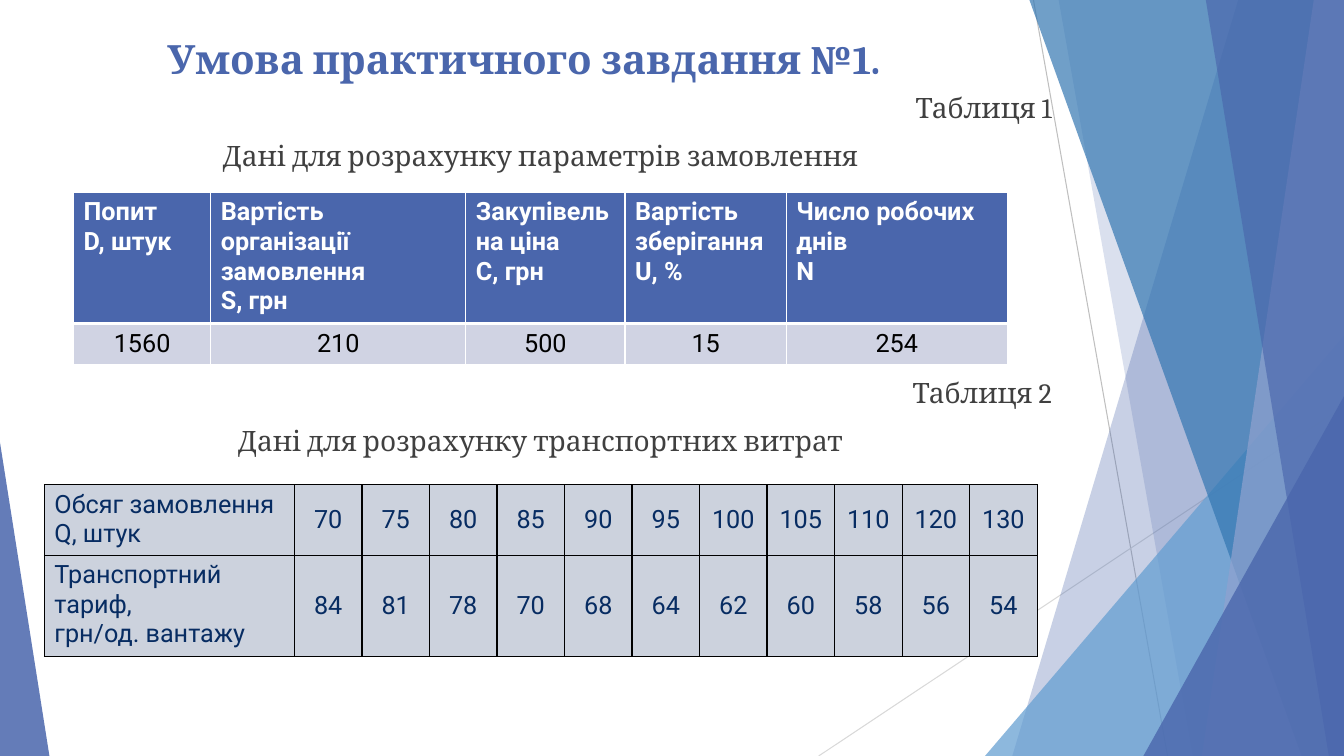
import pptx
import pptx.util
import pptx.dml.color
import pptx.enum.shapes
import pptx.enum.text
import pptx.oxml
from pptx.oxml.ns import qn
from pptx.util import Inches

# Content
TITLE = "Умова практичного завдання №1."
CAPTIONS = [  # label, heading, top of the label
    ("Таблиця 1", "Дані для розрахунку параметрів замовлення", 0.85),
    ("Таблиця 2", "Дані для розрахунку транспортних витрат", 3.68),
]
ORDER_ROWS = [
    ["Попит\nD, штук", "Вартість організації замовлення\nS, грн",
     "Закупівельна ціна\nС, грн", "Вартість зберігання\nU, %",
     "Число робочих днів\nN"],
    [1560, 210, 500, 15, 254],
]
TARIFF_ROWS = [
    ["Обсяг замовлення\nQ, штук", 70, 75, 80, 85, 90, 95, 100, 105, 110, 120, 130],
    ["Транспортний тариф,\nгрн/од. вантажу", 84, 81, 78, 70, 68, 64, 62, 60, 58, 56, 54],
]

COLORS = {
    "blue": "4A66AC", "sky": "629DD1", "ocean": "3477B2", "mist": "90A2CF",
    "gray": "BFBFBF", "light gray": "D9D9D9", "text": "404040", "navy": "072C62",
    "pale": "D0D3E3", "steel": "CCD2DD", "white": "FFFFFF", "black": "000000",
}
WIDTH, HEIGHT = 13.33, 7.5
LINES = [((10.25, 0), (11.58, HEIGHT), "gray"),
         ((WIDTH, 4.03), (8.12, HEIGHT), "light gray")]
# Bands reach the right edge: top-left x, bottom-left x, colour, opacity %
# Triangles stand on the bottom edge: left, top, width, apex, colour, opacity %
FACETS = [
    ("band", 12.28, 10.04, "blue", 30),
    ("band", 10.5, 11.83, "blue", 20),
    ("triangle", 9.77, 3.33, 3.56, 1, "sky", 72),
    ("band", 10.21, 12.91, "ocean", 70),
    ("band", 13.03, 11.92, "mist", 70),
    ("band", 11.96, 13.18, "blue", 65),
    ("triangle", 11.34, 3.93, 1.99, 1, "blue", 80),
    ("triangle", 0, 4.39, 0.49, 0, "blue", 85),
]

ALIGN = pptx.enum.text.PP_ALIGN
ANCHOR = pptx.enum.text.MSO_ANCHOR


def rgb(name):
    return pptx.dml.color.RGBColor.from_string(COLORS[name])


def format_text(frame, align, size, font, color, bold=False):
    values = {"size": pptx.util.Pt(size), "name": font, "bold": bold}
    for para in frame.paragraphs:
        para.alignment = align
        for span in para.runs:
            for key, value in values.items():
                setattr(span.font, key, value)
            span.font.color.rgb = rgb(color)


def paint(shape, color, opacity):
    shape.shadow.inherit = False
    shape.line.fill.background()
    shape.fill.solid()
    shape.fill.fore_color.rgb = rgb(color)
    tint = shape.fill._xPr.find(qn("a:solidFill"))[0]
    pptx.oxml.xmlchemy.OxmlElement  # noqa: element factory used below
    alpha = pptx.oxml.xmlchemy.OxmlElement("a:alpha")
    alpha.set("val", str(opacity * 1000))
    tint.append(alpha)


def add_facet(kind, *values):
    *place, color, opacity = values
    if kind == "band":
        top_x, bottom_x = place
        corners = [(WIDTH, 0), (WIDTH, HEIGHT), (bottom_x, HEIGHT)]
        builder = page.shapes.build_freeform(Inches(top_x), 0)
        builder.add_line_segments([(Inches(x), Inches(y)) for x, y in corners])
        facet = builder.convert_to_shape()
    else:
        left, top, width, apex = place
        facet = page.shapes.add_shape(
            pptx.enum.shapes.MSO_SHAPE.ISOSCELES_TRIANGLE,
            Inches(left), Inches(top), Inches(width), Inches(HEIGHT - top))
        facet.adjustments[0] = apex
    paint(facet, color, opacity)


def add_borders(cell, color, widths):
    for side, width in zip("LRTB", widths):
        cell._tc.get_or_add_tcPr().append(pptx.oxml.parse_xml(
            '<a:ln%s xmlns:a="http://schemas.openxmlformats.org/drawingml/2006/main" '
            'w="%d"><a:solidFill><a:srgbClr val="%s"/></a:solidFill></a:ln%s>'
            % (side, pptx.util.Pt(width), COLORS[color], side)))


def add_grid(rows, left, top, widths, heights, style):
    """style(row, column) gives fill, font colour, bold, border colour, border widths."""
    grid = page.shapes.add_table(
        len(rows), len(widths), Inches(left), Inches(top),
        Inches(sum(widths)), Inches(sum(heights))).table
    grid.first_row = grid.horz_banding = False
    for column, width in zip(grid.columns, widths):
        column.width = Inches(width)
    for r, row in enumerate(rows):
        grid.rows[r].height = Inches(heights[r])
        for c, value in enumerate(row):
            fill, color, bold, border, border_widths = style(r, c)
            cell = grid.cell(r, c)
            cell.text = str(value)
            number = isinstance(value, int)
            cell.vertical_anchor = ANCHOR.MIDDLE if number else ANCHOR.TOP
            format_text(cell.text_frame, ALIGN.CENTER if number else ALIGN.LEFT,
                        18, "Roboto", color, bold)
            add_borders(cell, border, border_widths)
            cell.fill.solid()
            cell.fill.fore_color.rgb = rgb(fill)


def order_style(r, c):
    if r == 0:
        return "blue", "white", True, "white", (1, 1, 1, 3)
    return "pale", "black", False, "white", (1, 1, 3, 1)


def tariff_style(r, c):
    return "steel", "navy", False, "black", (1, 1, 1, 1)


deck = pptx.Presentation()
deck.slide_width, deck.slide_height = Inches(WIDTH), Inches(HEIGHT)
page = deck.slides.add_slide(deck.slide_layouts[5])

# Background lines and facets
for start, end, color in LINES:
    line = page.shapes.add_connector(
        pptx.enum.shapes.MSO_CONNECTOR.STRAIGHT, *map(Inches, start + end))
    line.line.color.rgb = rgb(color)
    line.line.width = pptx.util.Pt(0.75)
    line._element.spPr.append(pptx.oxml.xmlchemy.OxmlElement("a:effectLst"))
for facet_values in FACETS:
    add_facet(*facet_values)

# Title
title = page.shapes.title
title.left, title.top, title.width, title.height = map(Inches, (1.56, 0.29, 7.62, 0.67))
title.text_frame.text = TITLE
title.text_frame.vertical_anchor = ANCHOR.TOP
title.text_frame.auto_size = pptx.enum.text.MSO_AUTO_SIZE.NONE
format_text(title.text_frame, ALIGN.LEFT, 28.8, "Cambria", "blue", True)

# Table labels and headings
for label, heading, top in CAPTIONS:
    for step, (words, align) in enumerate([(label, ALIGN.RIGHT), (heading, ALIGN.CENTER)]):
        box = page.shapes.add_textbox(
            Inches(0.19), Inches(top + 0.47 * step), Inches(10.34), Inches(0.47))
        box.text_frame.word_wrap = True
        box.text_frame.text = words
        format_text(box.text_frame, align, 20, "Cambria", "text")

# Tables
add_grid(ORDER_ROWS, 0.73, 1.91, [1.36, 2.53, 1.58, 1.6, 2.19], [1.27, 0.41], order_style)
add_grid(TARIFF_ROWS, 0.44, 4.81, [2.48] + [0.67] * 11, [0.7, 1], tariff_style)

deck.save("out.pptx")
